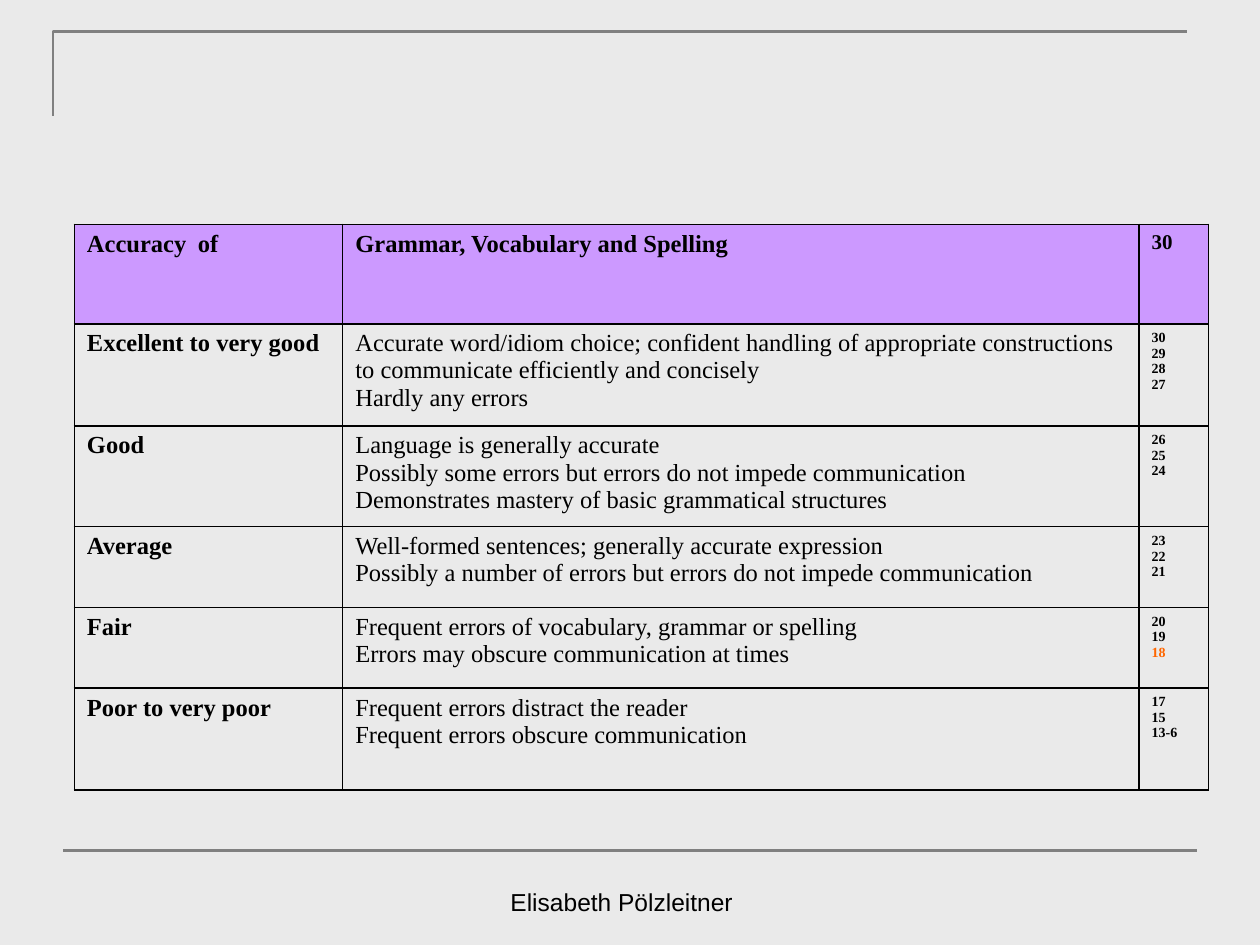
"""Build a slide with a grading rubric for language accuracy."""
from dataclasses import dataclass
from typing import Optional

from lxml import etree
from pptx import Presentation
from pptx import util as u
from pptx.dml.color import RGBColor
from pptx.enum import shapes, text
from pptx.oxml import ns


@dataclass(frozen=True)
class Theme:
    background: str = "EAEAEA"
    rule: str = "808080"
    header: str = "CC99FF"
    ink: str = "000000"
    highlight: str = "FF6600"
    serif: str = "Times New Roman"
    sans: str = "Arial"
    body: int = 14
    total: int = 12
    score: int = 8
    rule_width: float = 1.5
    border_width: float = 1


@dataclass(frozen=True)
class Band:
    height: float
    label: str
    criteria: tuple[str, ...]
    scores: tuple[str, ...]
    tab: Optional[tuple[float, str]] = None


THEME = Theme()
HANGING = 0.38
HIGHLIGHTED_SCORE = "18"
COLUMNS = (2.13, 6.32, 0.55)
BANDS = (
    Band(0.79, "Accuracy\tof", ("Grammar, Vocabulary and Spelling",), ("30",), (0.98, "l")),
    Band(0.81, "Excellent to very good",
         ("Accurate word/idiom choice; confident handling of appropriate constructions",
          "to communicate efficiently and concisely",
          "Hardly any errors"),
         ("30", "29", "28", "27")),
    Band(0.76, "Good",
         ("Language is generally accurate",
          "Possibly some errors but errors do not impede communication",
          "Demonstrates mastery of basic grammatical structures"),
         ("26", "25", "24")),
    Band(0.64, "Average",
         ("Well-formed sentences; generally accurate expression",
          "Possibly a number of errors but errors do not impede communication"),
         ("23", "22", "21")),
    Band(0.64, "Fair",
         ("Frequent errors of vocabulary, grammar or spelling",
          "Errors may obscure communication at times"),
         ("20", "19", HIGHLIGHTED_SCORE)),
    Band(0.81, "Poor to very poor",
         ("Frequent errors distract the reader",
          "Frequent errors obscure communication"),
         ("17", "15", "13-6")),
)


def color(value: str) -> RGBColor:
    return RGBColor.from_string(value)


def write(frame, lines, *, size=THEME.body, font=THEME.serif, bold=False,
          align=text.PP_ALIGN.JUSTIFY, hanging=0.0, tab=None, highlight=None) -> None:
    for index, line in enumerate(lines):
        paragraph = frame.paragraphs[0] if index == 0 else frame.add_paragraph()
        paragraph.alignment = align
        properties = paragraph._p.get_or_add_pPr()
        if hanging:
            properties.set("marL", str(u.Inches(hanging)))
            properties.set("indent", str(-u.Inches(hanging)))
        if tab:
            stops = etree.SubElement(properties, ns.qn("a:tabLst"))
            etree.SubElement(stops, ns.qn("a:tab"), pos=str(u.Inches(tab[0])), algn=tab[1])
        run = paragraph.add_run()
        run.text = line
        run.font.size = u.Pt(size)
        run.font.name = font
        run.font.bold = bold
        run.font.color.rgb = color(THEME.highlight if line == highlight else THEME.ink)


def style_line(shape) -> None:
    shape.line.color.rgb = color(THEME.rule)
    shape.line.width = u.Pt(THEME.rule_width)


def add_rules(slide) -> None:
    builder = slide.shapes.build_freeform(u.Inches(0.42), u.Inches(0.92))
    builder.add_line_segments(
        [(u.Inches(0.42), u.Inches(0.25)), (u.Inches(9.42), u.Inches(0.25))], close=False)
    corner = builder.convert_to_shape()
    corner.shadow.inherit = False
    corner.fill.background()
    style_line(corner)
    bottom = slide.shapes.add_connector(
        shapes.MSO_CONNECTOR.STRAIGHT,
        u.Inches(0.5), u.Inches(6.75), u.Inches(9.5), u.Inches(6.75))
    style_line(bottom)
    etree.SubElement(bottom._element.spPr, ns.qn("a:effectLst"))


def style_cell(cell, fill: Optional[str]) -> None:
    if fill:
        cell.fill.solid()
        cell.fill.fore_color.rgb = color(fill)
    else:
        cell.fill.background()
    properties = cell._tc.get_or_add_tcPr()
    for index, side in enumerate(("lnL", "lnR", "lnT", "lnB")):
        border = etree.Element(ns.qn(f"a:{side}"), w=str(u.Pt(THEME.border_width)))
        solid = etree.SubElement(border, ns.qn("a:solidFill"))
        etree.SubElement(solid, ns.qn("a:srgbClr"), val=THEME.ink)
        properties.insert(index, border)


def add_rubric(slide) -> None:
    heights = [band.height for band in BANDS]
    table = slide.shapes.add_table(
        len(BANDS), len(COLUMNS), u.Inches(0.59), u.Inches(1.78),
        u.Inches(sum(COLUMNS)), u.Inches(sum(heights))).table
    table.first_row = table.horz_banding = False
    for column, width in zip(table.columns, COLUMNS):
        column.width = u.Inches(width)
    for index, band in enumerate(BANDS):
        table.rows[index].height = u.Inches(band.height)
        is_header = index == 0
        label, criteria, scores = (table.cell(index, number) for number in range(3))
        for cell in (label, criteria, scores):
            style_cell(cell, THEME.header if is_header else None)
        write(label.text_frame, (band.label,), bold=True, hanging=HANGING, tab=band.tab,
              align=text.PP_ALIGN.JUSTIFY if is_header else text.PP_ALIGN.LEFT)
        write(criteria.text_frame, band.criteria, bold=is_header, hanging=HANGING)
        write(scores.text_frame, band.scores, bold=True, hanging=HANGING,
              size=THEME.total if is_header else THEME.score, highlight=HIGHLIGHTED_SCORE)


def add_footer(slide) -> None:
    footer = slide.shapes.add_textbox(
        u.Inches(3.35), u.Inches(6.82), u.Inches(3.17), u.Inches(0.5))
    footer.text_frame.word_wrap = True
    footer.text_frame.vertical_anchor = text.MSO_ANCHOR.BOTTOM
    write(footer.text_frame, ("Elisabeth Pölzleitner",), font=THEME.sans,
          align=text.PP_ALIGN.CENTER)


def main() -> None:
    presentation = Presentation()
    presentation.slide_width = u.Inches(10)
    presentation.slide_height = u.Inches(7.5)
    slide = presentation.slides.add_slide(presentation.slide_layouts[6])
    slide.background.fill.solid()
    slide.background.fill.fore_color.rgb = color(THEME.background)
    add_rules(slide)
    add_footer(slide)
    add_rubric(slide)
    presentation.save("out.pptx")


if __name__ == "__main__":
    main()
